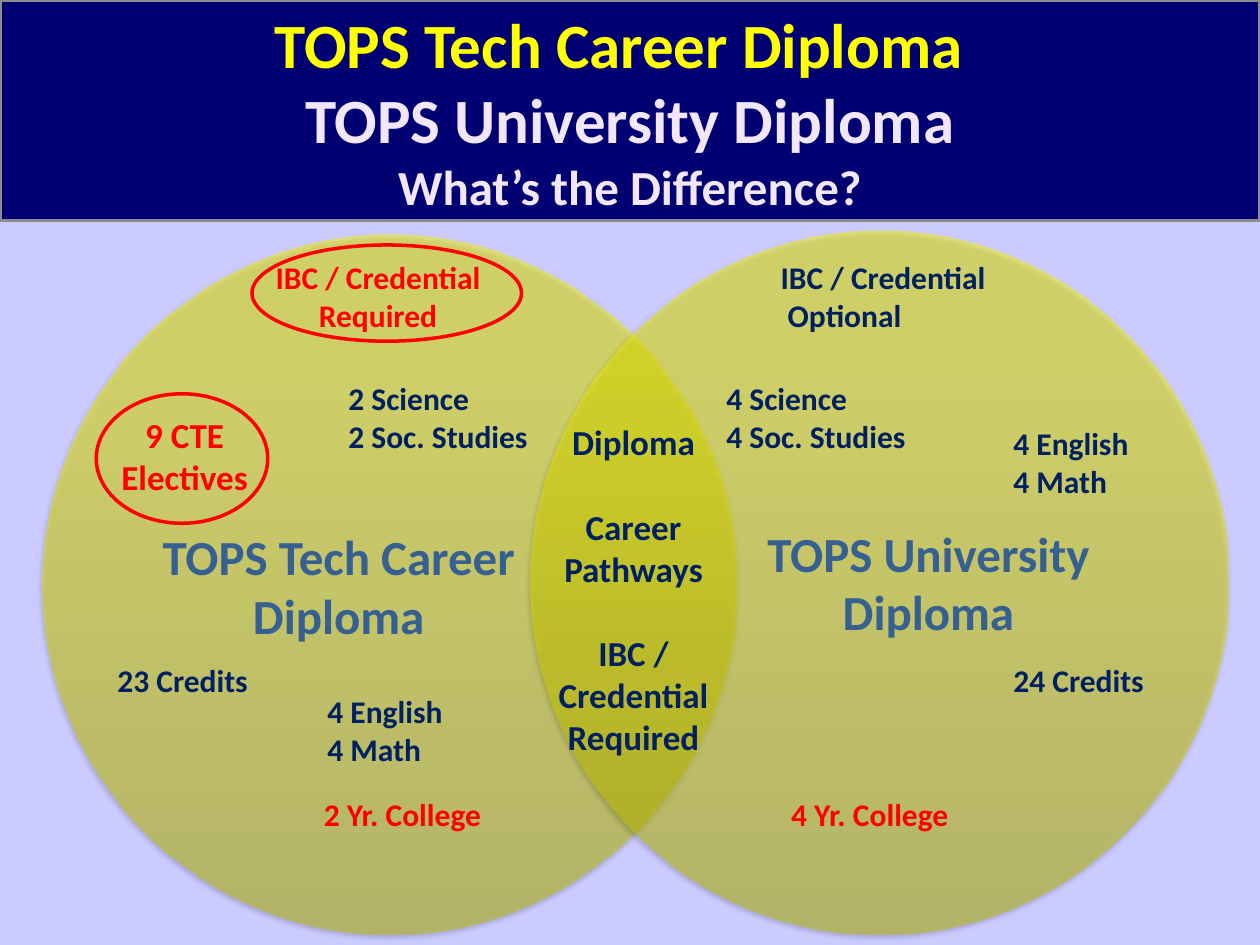
from lxml import etree
from pptx import Presentation
from pptx.dml.color import RGBColor
from pptx.enum.shapes import MSO_SHAPE as SHAPE
from pptx.enum.text import MSO_ANCHOR as ANCHOR, PP_ALIGN as ALIGN
from pptx.oxml import parse_xml
from pptx.util import Pt

COLORS = {"page": "CBCBFF", "banner": "000072", "border": "8D8D8D", "yellow": "FFFF00",
          "white": "FFFFFF", "lilac": "F2E6FA", "name": "366092", "navy": "002060", "red": "FF0000",
          "olive": "BEBE00", "lemon": "F7F700", "light": "F8F800", "shadow": "000000"}
NS = "http://schemas.openxmlformats.org/drawingml/2006/main"


def rgb(name):
    """Return the named colour."""
    return RGBColor.from_string(COLORS[name])


def add_run(p, text, size, color):
    """Add one bold run to a paragraph."""
    r = p.add_run()
    r.text = text
    r.font.name, r.font.size, r.font.bold = "Calibri", Pt(size), True
    r.font.color.rgb = rgb(color)


def write(tf, paragraphs, align, gap=0):
    """Fill a text frame with paragraphs, each a list of runs."""
    for i, runs in enumerate(paragraphs):
        p = tf.add_paragraph() if i else tf.paragraphs[0]
        p.alignment = align
        p.space_before = Pt(gap if i else 0)
        for run in runs:
            add_run(p, *run)


def add_label(s, x, y, w, h, lines, size=18, color="navy", align=ALIGN.LEFT, gap=0):
    """Add a wrapped text box with one run per line."""
    tf = s.shapes.add_textbox(Pt(x), Pt(y), Pt(w), Pt(h)).text_frame
    tf.word_wrap = True
    write(tf, [[(line, size, color)] for line in lines], align, gap)
    return tf


def add_banner(s, x, y, w, h):
    """Draw the title banner."""
    sp = s.shapes.add_shape(SHAPE.RECTANGLE, Pt(x), Pt(y), Pt(w), Pt(h))
    sp.shadow.inherit = False
    sp.fill.solid()
    sp.fill.fore_color.rgb = rgb("banner")
    sp.line.color.rgb = rgb("border")
    sp.line.width = Pt(2)
    sp.text_frame.vertical_anchor = ANCHOR.MIDDLE
    write(sp.text_frame, [
        [("TOPS Tech Career Diploma ", 36, "yellow"), (" ", 20, "white")],
        [("TOPS University Diploma", 36, "lilac")],
        [("What’s the Difference?", 28, "lilac")]], ALIGN.CENTER)


def style_circle(sp):
    """Give a circle its translucent gradient and soft shadow."""
    stops = "".join(
        f'<a:gs pos="{pos * 1000}"><a:srgbClr val="{COLORS[c]}"><a:alpha val="50000"/></a:srgbClr></a:gs>'
        for pos, c in ((0, "olive"), (80, "lemon"), (100, "light")))
    fill = parse_xml(f'<a:gradFill xmlns:a="{NS}" rotWithShape="1"><a:gsLst>{stops}</a:gsLst>'
                     '<a:lin ang="16200000" scaled="0"/></a:gradFill>')
    sp.line.fill.background()
    sp.shadow.inherit = False
    spPr = sp._element.spPr
    spPr.find(f"{{{NS}}}prstGeom").addnext(fill)
    shadow = etree.SubElement(spPr.find(f"{{{NS}}}effectLst"), f"{{{NS}}}outerShdw", blurRad=str(Pt(3.1)),
                              dist=str(Pt(1.8)), dir="5400000", rotWithShape="0")
    color = etree.SubElement(shadow, f"{{{NS}}}srgbClr", val=COLORS["shadow"])
    etree.SubElement(color, f"{{{NS}}}alpha", val="35000")


def add_ring(s, x, y, w, h):
    """Draw a red outline around a highlighted label."""
    sp = s.shapes.add_shape(SHAPE.FLOWCHART_CONNECTOR, Pt(x), Pt(y), Pt(w), Pt(h))
    sp.shadow.inherit = False
    sp.fill.background()
    sp.line.color.rgb = rgb("red")
    sp.line.width = Pt(2)


def add_diploma(s, x, y, w, h, name, name_x, labels, rings=()):
    """Draw one diploma circle with its name, labels and rings."""
    style_circle(s.shapes.add_shape(SHAPE.OVAL, Pt(x), Pt(y), Pt(w), Pt(h)))
    tf = add_label(s, x + name_x, y + 47.5, 229, 306, name, 28, "name", ALIGN.CENTER)
    tf.vertical_anchor = ANCHOR.MIDDLE
    tf.margin_left = tf.margin_right = tf.margin_top = tf.margin_bottom = 0
    for dx, dy, lw, lh, *text in labels:
        add_label(s, x + dx, y + dy, lw, lh, *text)
    for dx, dy, rw, rh in rings:
        add_ring(s, x + dx, y + dy, rw, rh)


def add_shared(s, x, y, w, h):
    """Write what both diplomas share."""
    add_label(s, x, y, w, h, ["Diploma", "Career Pathways", "IBC / Credential Required"],
              20, "navy", ALIGN.CENTER, 24)


def main():
    """Build the slide and save it."""
    prs = Presentation()
    prs.slide_width, prs.slide_height = Pt(720), Pt(540)
    s = prs.slides.add_slide(prs.slide_layouts[6])
    s.background.fill.solid()
    s.background.fill.fore_color.rgb = rgb("page")
    add_diploma(s, 24, 134, 397, 400, ["TOPS Tech Career Diploma"], 55, [
        (126, 10, 132, 51, ["IBC / Credential Required"], 18, "red", ALIGN.CENTER),
        (168, 79, 120, 51, ["2 Science", "2 Soc. Studies"]),
        (31, 99, 101, 55, ["9 CTE Electives"], 20, "red", ALIGN.CENTER),
        (36, 240, 90, 29, ["23 Credits"]),
        (156, 258, 143, 51, ["4 English", "4 Math"]),
        (137, 317, 138, 29, ["2 Yr. College"], 18, "red", ALIGN.CENTER),
    ], [(31, 91, 98, 74), (120, 6, 154, 55)])
    add_diploma(s, 303, 132, 399, 402, ["TOPS University", "Diploma"], 113, [
        (136, 12, 133, 51, ["IBC / Credential  Optional"]),
        (105, 81, 164, 51, ["4 Science", "4 Soc. Studies"]),
        (269, 107, 81, 51, ["4 English", "4 Math"]),
        (269, 242, 100, 29, ["24 Credits"]),
        (142, 319, 114, 29, ["4 Yr. College"], 18, "red"),
    ])
    add_shared(s, 304.5, 237, 115, 201)
    add_banner(s, 0, 0, 720, 126)
    prs.save("out.pptx")


if __name__ == "__main__":
    main()
